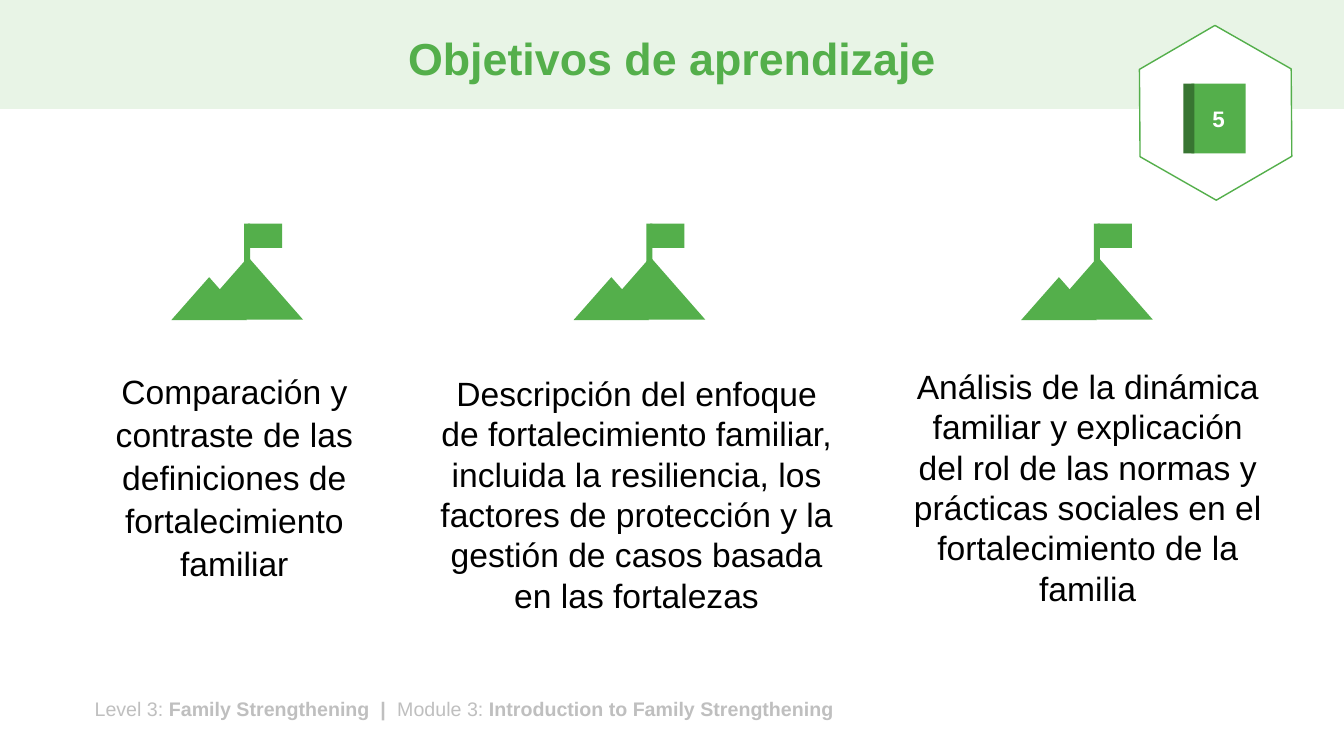
from pptx import Presentation
from pptx.dml.color import RGBColor
from pptx.enum.shapes import MSO_SHAPE
from pptx.enum.text import MSO_ANCHOR, PP_ALIGN
from pptx.util import Pt

RECTANGLE = MSO_SHAPE.RECTANGLE
TRIANGLE = MSO_SHAPE.ISOSCELES_TRIANGLE
HEXAGON = MSO_SHAPE.HEXAGON
LEFT, CENTER = PP_ALIGN.LEFT, PP_ALIGN.CENTER
TOP, MIDDLE = MSO_ANCHOR.TOP, MSO_ANCHOR.MIDDLE

GREEN = RGBColor(0x54, 0xAF, 0x4B)
DARK_GREEN = RGBColor(0x38, 0x75, 0x32)
PALE_GREEN = RGBColor(0xE8, 0xF4, 0xE6)
GRAY = RGBColor(0xBF, 0xBF, 0xBF)
BLACK = RGBColor(0, 0, 0)
WHITE = RGBColor(0xFF, 0xFF, 0xFF)

# Icon left, text frame (left, top, width, height), line spacing, wording
OBJECTIVES = [
    (122.4, (42.5, 259.2, 249.8, 162.7), 1.07,
     "Comparación y contraste de las definiciones de fortalecimiento familiar"),
    (409.7, (306, 262.8, 297.4, 181.4), 1.0,
     "Descripción del enfoque de fortalecimiento familiar, incluida la resiliencia, "
     "los factores de protección y la gestión de casos basada en las fortalezas"),
    (729.4, (644.4, 257.8, 265, 181.4), 1.0,
     "Análisis de la dinámica familiar y explicación del rol de las normas y "
     "prácticas sociales en el fortalecimiento de la familia"),
]
ICON_TOP = 159.8
# Pole, flag, high peak and low peak, measured from the icon's corner
ICON_PARTS = [
    (RECTANGLE, 52, 0, 4.3, 28.8),
    (RECTANGLE, 54.7, 0, 24.5, 17.3),
    (TRIANGLE, 15.6, 23.8, 78.5, 44.8),
    (TRIANGLE, 0, 38.2, 54, 30.6),
]
FOOTER = [("Level 3: ", False), ("Family Strengthening  |  ", True),
          ("Module 3: ", False), ("Introduction to Family Strengthening", True)]


class SlideBuilder:
    font = "Arial"

    def __init__(self, page):
        self.page = page

    def fill_text(self, box, spans, size, color, align=CENTER, anchor=TOP, spacing=1.0,
                  wrap=True):
        frame = box.text_frame
        frame.word_wrap = wrap
        frame.vertical_anchor = anchor
        para = frame.paragraphs[0]
        para.alignment = align
        para.line_spacing = spacing
        for text, bold in spans:
            span = para.add_run()
            span.text = text
            span.font.color.rgb = color
            for name, value in {"name": self.font, "size": Pt(size), "bold": bold}.items():
                setattr(span.font, name, value)

    def title(self, frame, text):
        box = self.page.shapes.title
        # Bring the title in front of the header band
        self.page.shapes.element.append(box.element)
        for name, value in zip(("left", "top", "width", "height"), frame):
            setattr(box, name, Pt(value))
        self.fill_text(box, [(text, True)], 32, GREEN, anchor=MIDDLE, spacing=0.9)

    def text(self, frame, spans, size, color, **layout):
        box = self.page.shapes.add_textbox(*map(Pt, frame))
        self.fill_text(box, spans, size, color, **layout)

    def shape(self, kind, frame, fill, line=None, group=None):
        shapes = group.shapes if group else self.page.shapes
        box = shapes.add_shape(kind, *map(Pt, frame))
        box.shadow.inherit = False
        box.fill.solid()
        box.fill.fore_color.rgb = fill
        if line is None:
            box.line.fill.background()
        else:
            box.line.color.rgb = line
            box.line.width = Pt(1)
        return box

    def mountain(self, left, top):
        group = self.page.shapes.add_group_shape()
        for kind, across, down, width, height in ICON_PARTS:
            self.shape(kind, (left + across, top + down, width, height), GREEN, group=group)

    def badge(self, number):
        group = self.page.shapes.add_group_shape()
        hexagon = self.shape(HEXAGON, (805.7, 26.6, 125.3, 108), WHITE, GREEN, group)
        hexagon.rotation = 29.7
        hexagon.adjustments[0] = 0.29
        cover = self.shape(RECTANGLE, (851, 59.8, 38.9, 49.7), GREEN, group=group)
        self.fill_text(cover, [(number, True)], 16, WHITE, anchor=MIDDLE, wrap=False)
        self.shape(RECTANGLE, (845.3, 59.8, 7.9, 49.7), DARK_GREEN, group=group)


def main():
    deck = Presentation()
    deck.slide_width, deck.slide_height = Pt(960), Pt(540)
    builder = SlideBuilder(deck.slides.add_slide(deck.slide_layouts[5]))

    # Header and footer
    builder.shape(RECTANGLE, (0, 0, 960, 77.8), PALE_GREEN)
    builder.text((60.5, 494.6, 764.6, 24.5), FOOTER, 14, GRAY, align=LEFT)
    builder.title((66.2, 9.4, 828, 68.4), "Objetivos de aprendizaje")

    # Learning objectives
    for icon_left, frame, spacing, text in OBJECTIVES:
        builder.mountain(icon_left, ICON_TOP)
        builder.text(frame, [(text, False)], 24, BLACK, spacing=spacing)

    # Book badge
    builder.badge("5")
    deck.save("out.pptx")


if __name__ == "__main__":
    main()
